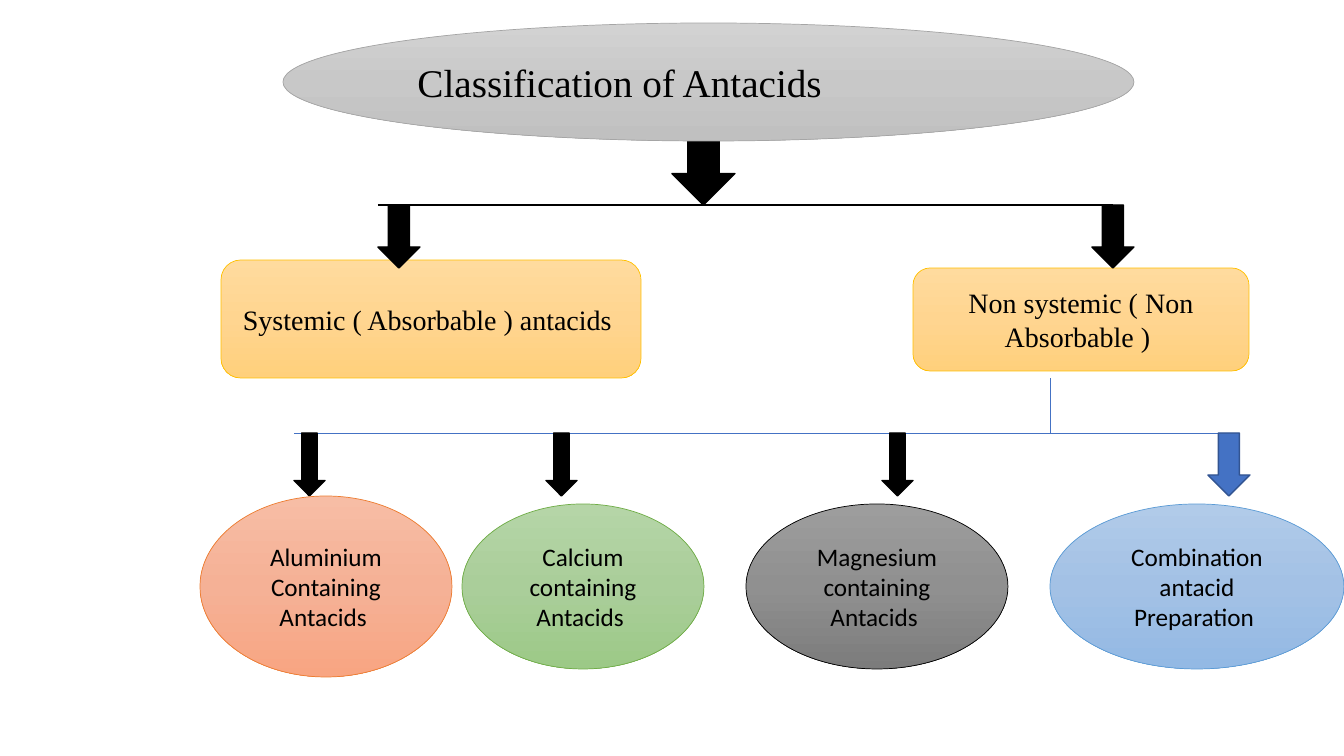
from copy import deepcopy

from lxml import etree
from pptx import Presentation
from pptx.dml.color import RGBColor
from pptx.enum.shapes import MSO_CONNECTOR, MSO_SHAPE
from pptx.enum.text import MSO_ANCHOR, PP_ALIGN
from pptx.oxml.ns import qn
from pptx.util import Pt

OVAL, ROUND, ARROW = MSO_SHAPE.OVAL, MSO_SHAPE.ROUNDED_RECTANGLE, MSO_SHAPE.DOWN_ARROW
LEFT, CENTER = PP_ALIGN.LEFT, PP_ALIGN.CENTER
MIDDLE = MSO_ANCHOR.MIDDLE
STRAIGHT = MSO_CONNECTOR.STRAIGHT
SERIF, SANS = "Times New Roman", "Calibri"

BLACK = RGBColor(0x00, 0x00, 0x00)
BLUE = RGBColor(0x44, 0x72, 0xC4)
NAVY = RGBColor(0x32, 0x54, 0x91)

# Each palette: top, middle and bottom of the gradient, then the outline
GRAY = [RGBColor(0xD2, 0xD2, 0xD2), RGBColor(0xC8, 0xC8, 0xC8),
        RGBColor(0xC0, 0xC0, 0xC0), RGBColor(0xA5, 0xA5, 0xA5)]
GOLD = [RGBColor(0xFF, 0xDB, 0x9E), RGBColor(0xFF, 0xD5, 0x90),
        RGBColor(0xFF, 0xD0, 0x7C), RGBColor(0xFF, 0xC0, 0x00)]
CORAL = [RGBColor(0xF7, 0xBD, 0xA5), RGBColor(0xF5, 0xB1, 0x96),
         RGBColor(0xF8, 0xA5, 0x82), RGBColor(0xED, 0x7D, 0x31)]
GREEN = [RGBColor(0xB5, 0xD5, 0xA7), RGBColor(0xAA, 0xCE, 0x9A),
         RGBColor(0x9C, 0xC9, 0x87), RGBColor(0x70, 0xAD, 0x47)]
STEEL = [RGBColor(0x9D, 0x9D, 0x9D), RGBColor(0x90, 0x90, 0x90),
         RGBColor(0x7C, 0x7C, 0x7C), BLACK]
SKY = [RGBColor(0xB1, 0xCB, 0xE9), RGBColor(0xA3, 0xC1, 0xE5),
       RGBColor(0x93, 0xB9, 0xE4), RGBColor(0x5B, 0x9B, 0xD5)]

# Content, lengths in px
WIDE, HIGH = 1344, 756
TOP_BAR, LOW_BAR = 205, 433

TITLE = ("Classification of Antacids", (283, 23, 851, 118), GRAY)
GROUPS = [
    ("Systemic ( Absorbable ) antacids ", (221, 260, 420, 118), GOLD),
    ("Non systemic ( Non Absorbable ) ", (913, 268, 336, 103), GOLD),
]
KINDS = [
    ("Aluminium Containing Antacids ", (200, 496, 252, 181), CORAL),
    ("Calcium containing Antacids ", (462, 504, 242, 165), GREEN),
    ("Magnesium containing Antacids ", (746, 504, 262, 165), STEEL),
    ("Combination antacid Preparation ", (1050, 504, 294, 165), SKY),
]
# start, end, colour, points
LINES = [
    ((378, TOP_BAR), (1113, TOP_BAR), BLACK, 1.5),
    ((1050, 378), (1050, LOW_BAR), BLUE, 0.5),
    ((1218, LOW_BAR), (294, LOW_BAR), BLUE, 0.5),
]
# left, top, width, height, fill, outline
ARROWS = [(672, 134, 63, 71, BLACK, BLACK)]
ARROWS += [(x, TOP_BAR, 42, 63, BLACK, BLACK) for x in (378, 1092)]
ARROWS += [(x, LOW_BAR, 31, 63, BLACK, BLACK) for x in (294, 546, 882)]
ARROWS += [(1208, LOW_BAR, 42, 63, BLUE, NAVY)]

deck = Presentation()


def px(n):
    return round(n * 914400 / 100.8)


deck.slide_width, deck.slide_height = px(WIDE), px(HIGH)
slide = deck.slides.add_slide(deck.slide_layouts[6])


def add_shape(kind, box, edge, width):
    shape = slide.shapes.add_shape(kind, *map(px, box))
    shape.shadow.inherit = False
    shape.line.color.rgb = edge
    shape.line.width = Pt(width)
    return shape


def shade(shape, tones):
    fill = shape.fill
    fill.gradient()
    fill.gradient_angle = 270
    # Add a third stop halfway between the two default ones
    first = shape._element.spPr.find(".//" + qn("a:gs"))
    first.addnext(deepcopy(first))
    for i, (stop, tone) in enumerate(zip(fill.gradient_stops, tones)):
        stop.position = i / 2
        stop.color.rgb = tone


def add_node(kind, node, font, size, align=CENTER):
    text, box, tones = node
    shape = add_shape(kind, box, tones[3], 0.5)
    shade(shape, tones[:3])
    frame = shape.text_frame
    frame.word_wrap = True
    frame.vertical_anchor = MIDDLE
    para = frame.paragraphs[0]
    para.alignment = align
    run = para.add_run()
    run.text = text
    run.font.name = font
    run.font.size = Pt(size)
    run.font.color.rgb = BLACK


# Connecting lines
for start, end, color, width in LINES:
    line = slide.shapes.add_connector(STRAIGHT, *map(px, start + end))
    line.line.color.rgb = color
    line.line.width = Pt(width)
    etree.SubElement(line._element.spPr, qn("a:effectLst"))

# Group boxes, then arrows over them
for group in GROUPS:
    add_node(ROUND, group, SERIF, 20)
for *box, color, edge in ARROWS:
    arrow = add_shape(ARROW, box, edge, 1)
    arrow.fill.solid()
    arrow.fill.fore_color.rgb = color

# Title and the four kinds
add_node(OVAL, TITLE, SERIF, 28, LEFT)
for kind in KINDS:
    add_node(OVAL, kind, SANS, 18)

deck.save("out.pptx")
